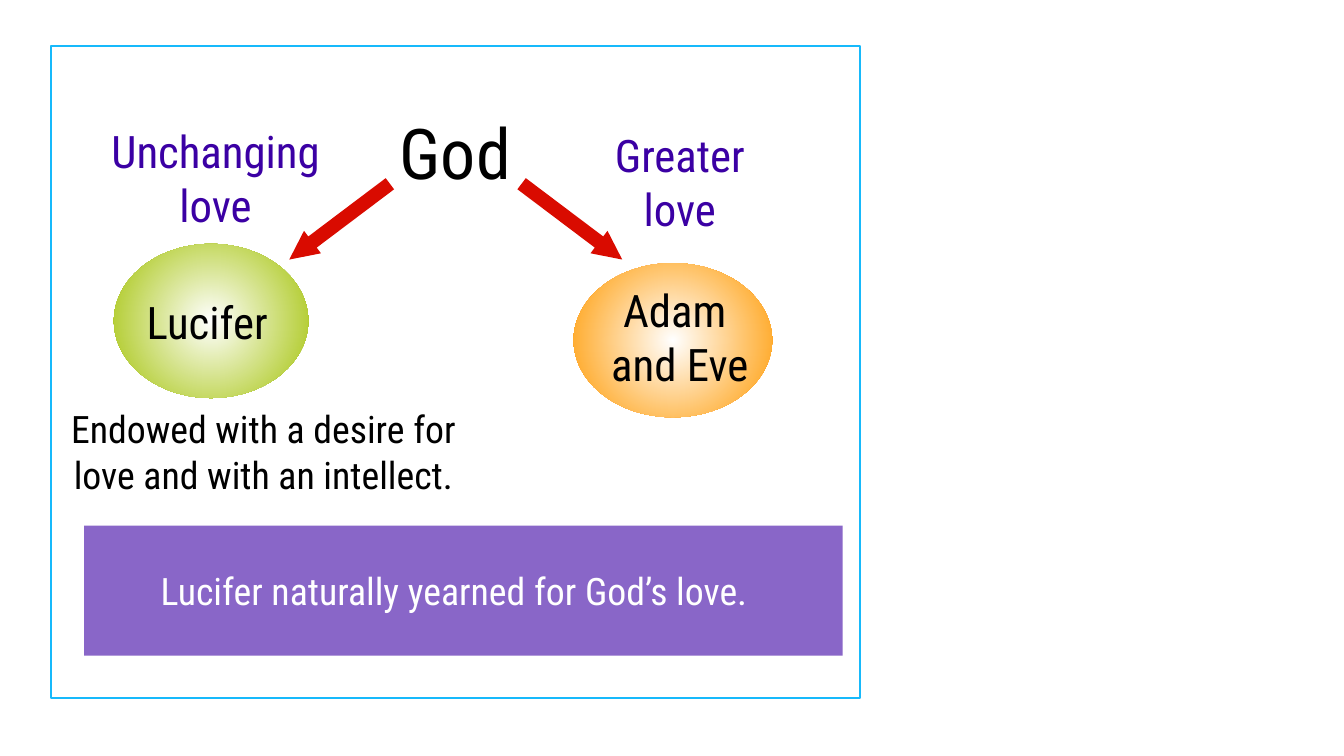
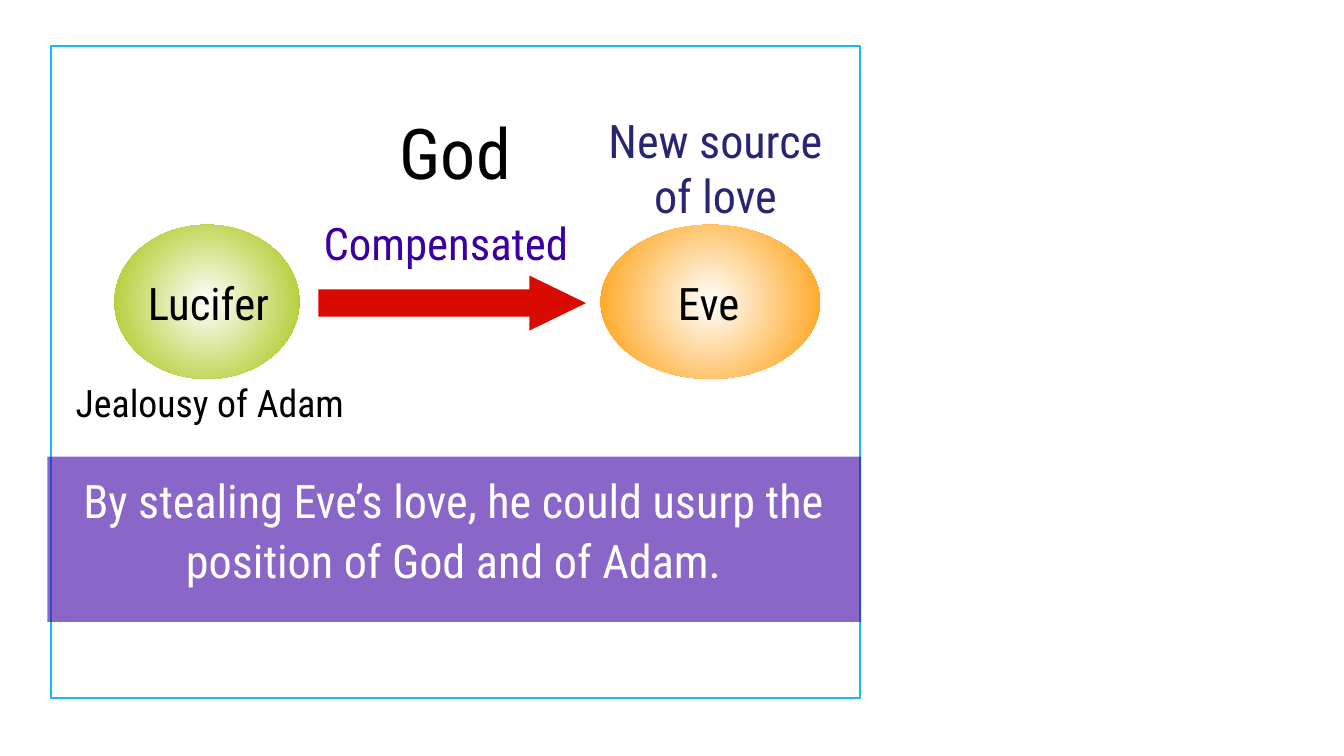
"""Builds two diagram slides about Lucifer, Adam and Eve, and the love of God."""
from lxml.etree import SubElement
from pptx import Presentation
from pptx.dml.color import RGBColor
from pptx.enum.shapes import MSO_SHAPE as SHAPE
from pptx.enum.text import MSO_ANCHOR as ANCHOR, MSO_AUTO_SIZE as AUTO, PP_ALIGN as ALIGN
from pptx.oxml import parse_xml
from pptx.oxml.ns import nsdecls, qn
from pptx.util import Cm, Pt

FONT = "Roboto Condensed"
BLACK, WHITE, PURPLE, NAVY = "000000", "FFFFFF", "3B00A4", "262673"
GREEN, ORANGE, RED, BLUE = "A3C205", "FF9900", "D90B00", "17B9FB"
GRADIENT = (
    '<a:gradFill %s rotWithShape="1"><a:gsLst>'
    '<a:gs pos="0"><a:srgbClr val="FFFFFF"/></a:gs>'
    '<a:gs pos="100000"><a:srgbClr val="%s"/></a:gs></a:gsLst>'
    '<a:path path="circle"><a:fillToRect l="50000" t="50000" r="50000" b="50000"/>'
    '</a:path></a:gradFill>'
)


def add_shape(slide, kind, box, color):
    """Add a filled preset shape; ovals get a radial gradient from white."""
    sp = slide.shapes.add_shape(kind, *map(Cm, box))
    sp.shadow.inherit = False
    sp.line.fill.background()
    sp.fill.solid()
    sp.fill.fore_color.rgb = RGBColor.from_string(color)
    if kind == SHAPE.OVAL:
        spPr = sp._element.spPr
        spPr.replace(spPr.find(qn("a:solidFill")), parse_xml(GRADIENT % (nsdecls("a"), color)))
    if kind == SHAPE.RIGHT_ARROW:
        sp.adjustments[0], sp.adjustments[1] = 0.495, 1.031
    return sp


def write(sp, box, lines, size, color=BLACK, spacing=None):
    """Place a text shape and fill it with centred paragraphs."""
    sp.left, sp.top, sp.width, sp.height = map(Cm, box)
    tf = sp.text_frame
    tf.word_wrap = True
    tf.auto_size = AUTO.NONE
    tf.vertical_anchor = ANCHOR.TOP
    tf.margin_left = tf.margin_top = tf.margin_right = tf.margin_bottom = 0
    for i, line in enumerate(lines):
        p = tf.add_paragraph() if i else tf.paragraphs[0]
        p.alignment = ALIGN.CENTER
        if spacing:
            p.line_spacing = spacing
        r = p.add_run()
        r.text = line
        r.font.name = FONT
        r.font.size = Pt(size)
        r.font.color.rgb = RGBColor.from_string(color)


prs = Presentation()
prs.slide_width, prs.slide_height = Cm(67.74), Cm(38.1)

slides = [
    {
        "ovals": [((5.74, 12.29, 9.8, 7.77), GREEN), ((28.91, 13.26, 10.01, 7.77), ORANGE)],
        "band": (4.24, 26.49, 38.23, 6.55),
        "arrows": [((13.94, 10.46, 6.35, 1.42), 143), ((25.65, 10.46, 6.35, 1.42), 37)],
        "texts": [
            ((5.05, 14.83, 10.8, 2.69), ["Lucifer"], 64),
            ((29.26, 14.25, 10.01, 5.38), ["Adam ", "and Eve"], 64),
            ((2.92, 20.47, 20.73, 4.37),
             ["Endowed with a desire for love and with an intellect."], 54),
            ((3.78, 28.37, 38.23, 4.5),
             ["Lucifer naturally yearned for God’s love."], 54, WHITE, 1.1),
            ((4.06, 6.25, 13.61, 6.58), ["Unchanging love"], 64, PURPLE),
            ((27.46, 6.45, 13.61, 6.58), ["Greater", "love"], 64, PURPLE),
        ],
    },
    {
        "ovals": [((5.77, 11.33, 9.32, 7.77), GREEN), ((30.28, 11.33, 11.05, 7.77), ORANGE)],
        "band": (2.39, 23.01, 41.02, 8.33),
        "arrows": [((16.05, 13.89, 13.49, 2.77), 0)],
        "texts": [
            ((3.33, 13.87, 14.35, 2.69), ["Lucifer"], 64),
            ((31.34, 13.87, 8.76, 2.69), ["Eve"], 64),
            ((1.07, 19.15, 19.02, 2.29), ["Jealousy of Adam"], 54),
            ((30.07, 5.64, 11.99, 4.42), ["New source of love"], 66, NAVY),
            ((3.07, 23.5, 39.6, 6.88),
             ["By stealing Eve’s love, he could usurp the position of God and of Adam."],
             66, WHITE, 1.1),
            ((15.67, 10.85, 13.61, 3.4), ["Compensated"], 64, PURPLE),
        ],
    },
]

for content in slides:
    slide = prs.slides.add_slide(prs.slide_layouts[5])
    write(slide.shapes.title, (20.14, 5.5, 5.61, 4.55), ["God"], 100)

    frame = add_shape(slide, SHAPE.RECTANGLE, (2.59, 2.34, 40.74, 32.82), WHITE)
    frame.fill.background()
    frame.line.color.rgb = RGBColor.from_string(BLUE)
    frame.line.width = Pt(3)

    for box, color in content["ovals"]:
        add_shape(slide, SHAPE.OVAL, box, color)

    band = add_shape(slide, SHAPE.RECTANGLE, content["band"], PURPLE)
    clr = band._element.spPr.find(qn("a:solidFill")).find(qn("a:srgbClr"))
    SubElement(clr, qn("a:alpha")).set("val", "60000")

    for box, angle in content["arrows"]:
        add_shape(slide, SHAPE.RIGHT_ARROW, box, RED).rotation = angle

    for box, *text in content["texts"]:
        write(slide.shapes.add_textbox(*map(Cm, box)), box, *text)

prs.save("out.pptx")
